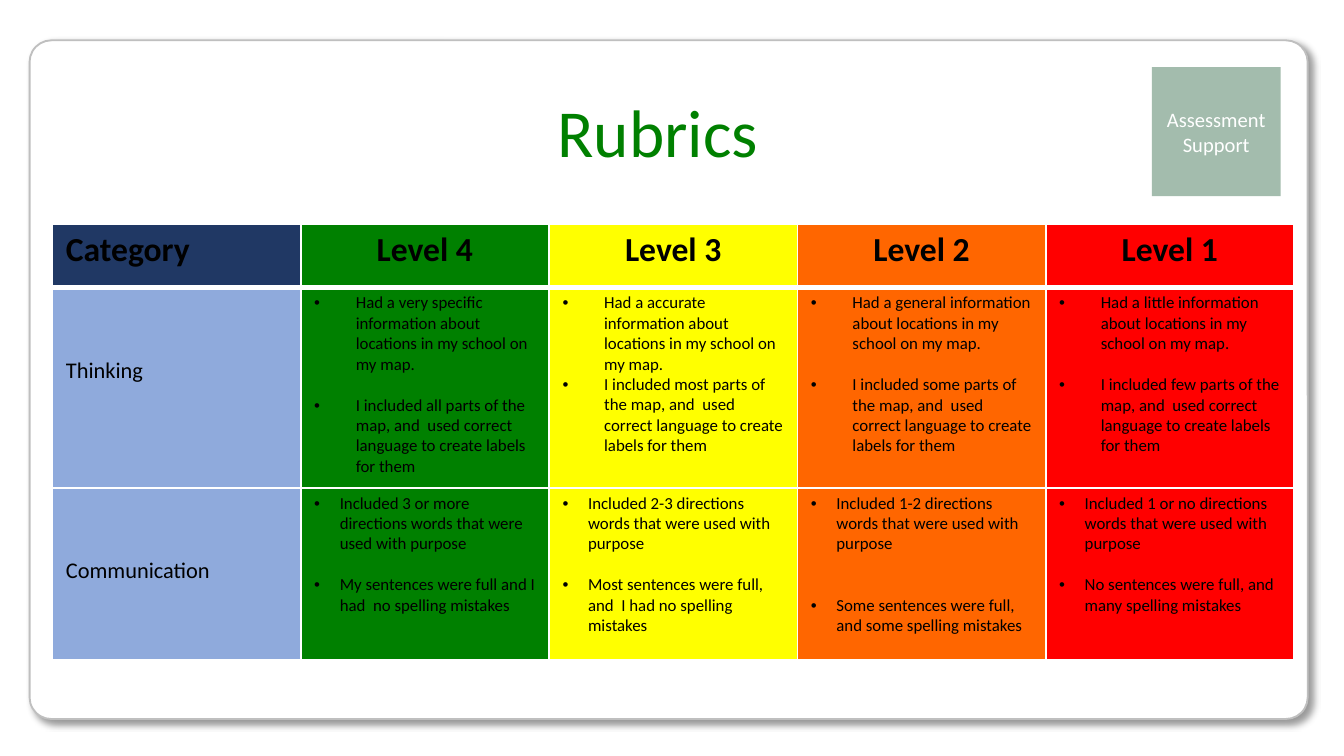
import pptx
import pptx.dml.color
import pptx.enum.shapes
import pptx.enum.text
import pptx.oxml
import pptx.oxml.ns
import pptx.util
from pptx.util import Inches

THEME = {
    "font": "Calibri",
    "white": "FFFFFF", "black": "000000", "outline": "BFBFBF",
    "tag": "A3BCAD", "title": "008000",
    "category": "203864", "label": "8FAADC",
    "levels": ["008000", "FFFF00", "FF6600", "FF0000"],
    "title_size": 36, "header_size": 18, "label_size": 12,
    "tag_size": 11, "body_size": 9, "body_line": 11,
}
NAMESPACE = pptx.oxml.ns.nsdecls("a")
ALIGN = pptx.enum.text.PP_ALIGN
ANCHOR = pptx.enum.text.MSO_ANCHOR
SHAPES = pptx.enum.shapes.MSO_SHAPE


def rgb(name):
    return pptx.dml.color.RGBColor.from_string(name)


def style(para, size, color, align=ALIGN.LEFT, bold=False):
    para.alignment = align
    for span in para.runs:
        span.font.name = THEME["font"]
        span.font.size = pptx.util.Pt(size)
        span.font.bold = bold
        span.font.color.rgb = rgb(color)


# Each criterion: label, bullet indent, then per level two bullets
# and the number of lines left open between them.
CRITERIA = [
    ("Thinking", 0.31, [
        ("Had a very specific information about locations in my school on my map.",
         "I included all parts of the map, and  used correct language to create labels for them", 1),
        ("Had a accurate information about locations in my school on my map.",
         "I included most parts of the map, and  used correct language to create labels for them", 0),
        ("Had a general information about locations in my school on my map.",
         "I included some parts of the map, and  used correct language to create labels for them", 1),
        ("Had a little information about locations in my school on my map.",
         "I included few parts of the map, and  used correct language to create labels for them", 1),
    ]),
    ("Communication", 0.19, [
        ("Included 3 or more directions words that were used with purpose",
         "My sentences were full and I had  no spelling mistakes", 1),
        ("Included 2-3 directions words that were used with purpose",
         "Most sentences were full, and  I had no spelling mistakes", 1),
        ("Included 1-2 directions words that were used with purpose",
         "Some sentences were full, and some spelling mistakes", 2),
        ("Included 1 or no directions words that were used with purpose",
         "No sentences were full, and many spelling mistakes", 1),
    ]),
]

# Widescreen, 16:9
deck = pptx.Presentation()
deck.slide_width, deck.slide_height = Inches(10), Inches(10 * 9 / 16)
page = deck.slides.add_slide(deck.slide_layouts[5])

# Rounded card with a soft shadow
card = page.shapes.add_shape(SHAPES.ROUNDED_RECTANGLE, Inches(0.22), Inches(0.3),
                             Inches(9.51), Inches(5.05))
card.adjustments[0] = 0.032
card.fill.solid()
card.fill.fore_color.rgb = rgb(THEME["white"])
card.line.color.rgb = rgb(THEME["outline"])
card.line.width = pptx.util.Pt(1)
card.element.spPr.append(pptx.oxml.parse_xml(
    f'<a:effectLst {NAMESPACE}><a:outerShdw blurRad="{pptx.util.Pt(4)}" '
    f'dist="{pptx.util.Pt(3)}" dir="2700000" algn="tl" rotWithShape="0">'
    f'<a:srgbClr val="{THEME["black"]}"><a:alpha val="40000"/></a:srgbClr>'
    '</a:outerShdw></a:effectLst>'))

# Corner tag
tag = page.shapes.add_shape(SHAPES.RECTANGLE, Inches(8.57), Inches(0.5),
                            Inches(0.96), Inches(0.96))
tag.shadow.inherit = False
tag.fill.solid()
tag.fill.fore_color.rgb = rgb(THEME["tag"])
tag.line.fill.background()
tag.text_frame.word_wrap = True
tag.text_frame.vertical_anchor = ANCHOR.MIDDLE
tag.text_frame.text = "Assessment Support"
style(tag.text_frame.paragraphs[0], THEME["tag_size"], THEME["white"], ALIGN.CENTER)

# Rubric table
table = page.shapes.add_table(3, 5, Inches(0.39), Inches(1.67),
                              Inches(9.24), Inches(3.24)).table
for column in table.columns:
    column.width = Inches(9.24 / 5)
for row, height in zip(table.rows, (0.47, 1.49, 1.28)):
    row.height = Inches(height)

for row_index, row in enumerate(table.rows):
    for column_index, cell in enumerate(row.cells):
        cell.margin_left = cell.margin_right = Inches(0.1)
        cell.margin_top = cell.margin_bottom = Inches(0.04)
        heavy_side = {0: "B", 1: "T"}.get(row_index)
        for side in "LRTB":
            width = pptx.util.Pt(3 if side == heavy_side else 1)
            cell._tc.get_or_add_tcPr().append(pptx.oxml.parse_xml(
                f'<a:ln{side} {NAMESPACE} w="{width}"><a:solidFill>'
                f'<a:srgbClr val="{THEME["white"]}"/></a:solidFill></a:ln{side}>'))
        first_fill = THEME["label"] if row_index else THEME["category"]
        cell.fill.solid()
        cell.fill.fore_color.rgb = rgb([first_fill, *THEME["levels"]][column_index])

headings = ["Category"] + [f"Level {level}" for level in (4, 3, 2, 1)]
for column_index, heading in enumerate(headings):
    cell = table.cell(0, column_index)
    cell.text_frame.text = heading
    style(cell.text_frame.paragraphs[0], THEME["header_size"], THEME["black"],
          ALIGN.CENTER if column_index else ALIGN.LEFT, bold=True)

for row_index, (label, indent, levels) in enumerate(CRITERIA, start=1):
    cell = table.cell(row_index, 0)
    cell.margin_top = Inches(0.52)
    cell.text_frame.text = label
    style(cell.text_frame.paragraphs[0], THEME["label_size"], THEME["black"])
    for column_index, (first, second, gap) in enumerate(levels, start=1):
        frame = table.cell(row_index, column_index).text_frame
        frame.text = f"{first}\n{second}"
        for para in frame.paragraphs:
            properties = para._p.get_or_add_pPr()
            properties.set("marL", str(Inches(indent)))
            properties.set("indent", str(-Inches(indent)))
            properties.append(pptx.oxml.parse_xml(
                f'<a:buFont {NAMESPACE} typeface="Arial"/>'))
            properties.append(pptx.oxml.parse_xml(f'<a:buChar {NAMESPACE} char="•"/>'))
            style(para, THEME["body_size"], THEME["black"])
        if gap:
            frame.paragraphs[1].space_before = pptx.util.Pt(gap * THEME["body_line"])

# Title, brought in front of the card
title = page.shapes.title
title.left, title.top = Inches(0.39), Inches(0.62)
title.width, title.height = Inches(9.01), Inches(0.71)
title.text_frame.text = "Rubrics"
title.text_frame.word_wrap = True
title.text_frame.vertical_anchor = ANCHOR.MIDDLE
style(title.text_frame.paragraphs[0], THEME["title_size"], THEME["title"], ALIGN.CENTER)
page.shapes.element.append(title.element)

deck.save("out.pptx")
